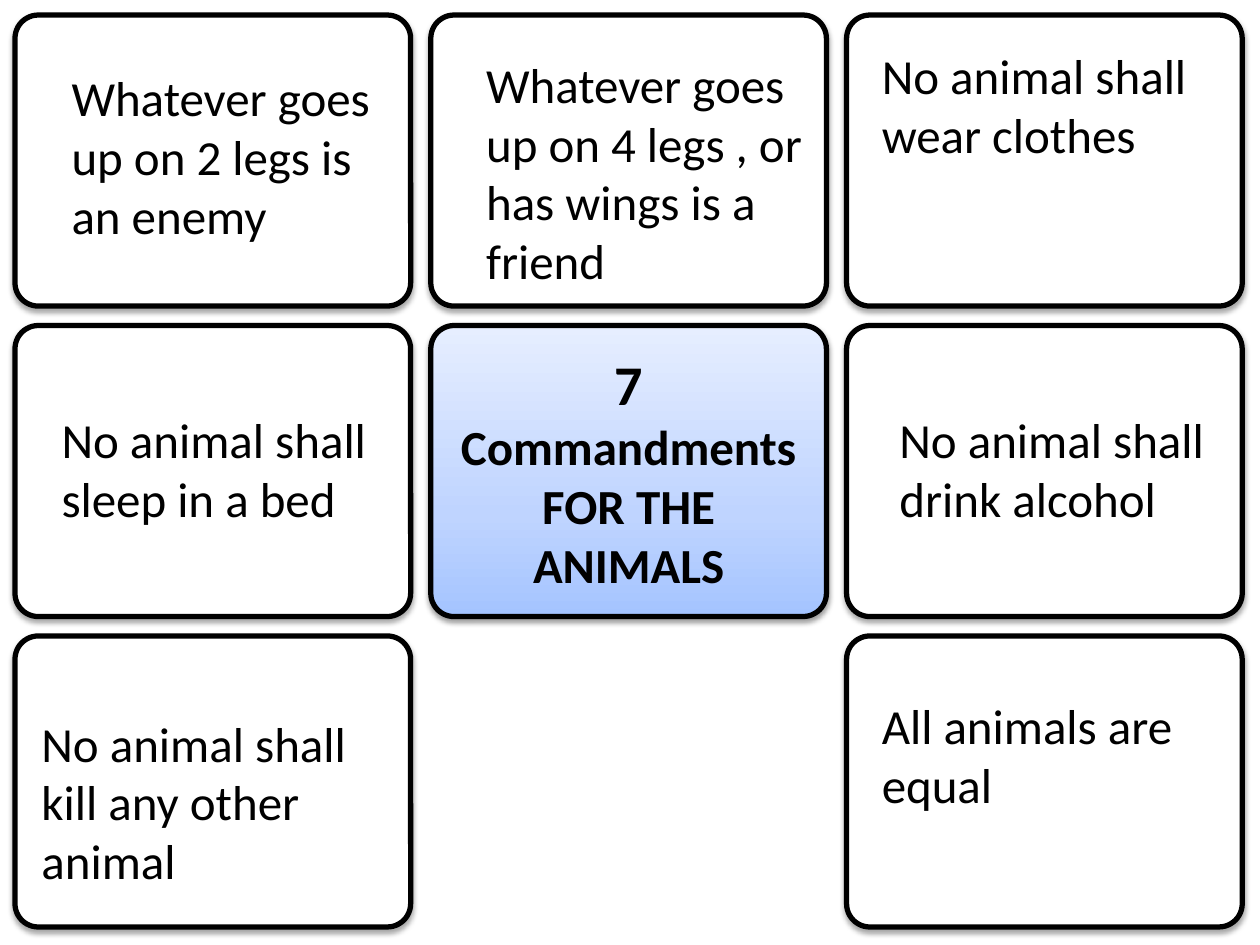
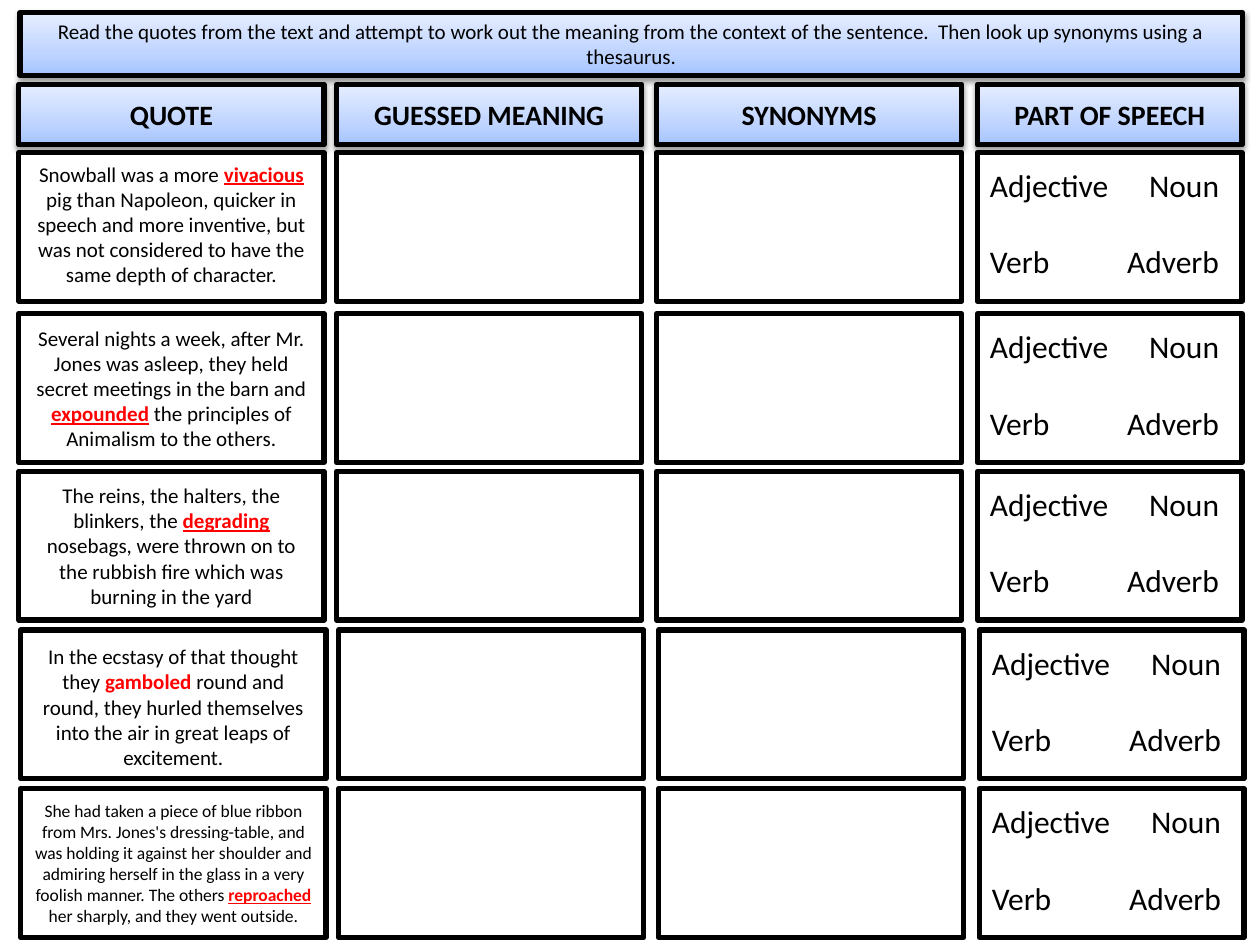
"""Builds a rules grid and a word-study sheet on two slides."""
from dataclasses import dataclass
from typing import Optional

import pptx
import pptx.dml.color
import pptx.enum.shapes
import pptx.enum.text
import pptx.oxml
import pptx.oxml.ns
import pptx.util
from lxml import etree

Pt = pptx.util.Pt
RGB = pptx.dml.color.RGBColor
KIND = pptx.enum.shapes.MSO_SHAPE
ALIGN = pptx.enum.text.PP_ALIGN
ANCHOR = pptx.enum.text.MSO_ANCHOR
FIT = pptx.enum.text.MSO_AUTO_SIZE
NS = pptx.oxml.ns.nsdecls("a")


@dataclass(frozen=True)
class Theme:
    """Colours, font and type sizes of both slides."""

    font: str = "Calibri"
    ink: str = "000000"
    paper: str = "FFFFFF"
    mark: str = "FF0000"
    blend: tuple = ((0, "A4C4FF"), (35, "BFD4FF"), (100, "E6EEFF"))
    edge: float = 3
    lead: float = 32
    rule: float = 28
    choice: float = 18
    head: float = 16
    body: float = 12
    small: float = 10


@dataclass(frozen=True)
class Box:
    """A place on the slide, in points."""

    left: float
    top: float
    width: float
    height: float

    def spots(self) -> list:
        """Returns the four lengths for python-pptx."""
        return [Pt(n) for n in (self.left, self.top, self.width, self.height)]


@dataclass(frozen=True)
class Rule:
    """One rule and the place of its words."""

    text: str
    box: Box


@dataclass(frozen=True)
class Quote:
    """A quote split around its key word, with its row's place."""

    start: str
    key: str
    rest: str
    top: float
    drop: float = 2.9
    shift: float = 0
    size: float = 12
    under: Optional[bool] = True


@dataclass(frozen=True)
class Column:
    """A column of the word sheet."""

    title: str
    left: float
    width: float


THEME = Theme()
RULES = (
    Rule("Whatever goes up on 2 legs is an enemy", Box(33.8, 35.3, 208.1, 108.7)),
    Rule("Whatever goes up on 4 legs , or has wings is a friend", Box(270.7, 27.4, 213.1, 143.3)),
    Rule("No animal shall wear clothes", Box(496.8, 22.3, 213.1, 74.9)),
    Rule("No animal shall sleep in a bed", Box(28.1, 230.4, 213.1, 74.9)),
    Rule("No animal shall drink alcohol", Box(506.9, 230.4, 213.1, 74.9)),
    Rule("No animal shall kill any other animal", Box(16.6, 403.9, 213.1, 108.7)),
    Rule("All animals are equal", Box(496.8, 393.8, 213.1, 74.9)),
)
COLUMNS = (
    Column("QUOTE", 10.8, 174.4),
    Column("GUESSED MEANING", 192.4, 174.4),
    Column("SYNONYMS", 375.2, 174.4),
    Column("PART OF SPEECH", 558.6, 151.2),
)
QUOTES = (
    Quote("Snowball was a more ", "vivacious",
          " pig than Napoleon, quicker in speech and more inventive, but was not "
          "considered to have the same depth of character.", 87.1, drop=1.4),
    Quote("Several nights a week, after Mr. Jones was asleep, they held secret "
          "meetings in the barn and ", "expounded",
          " the principles of Animalism to the others.", 179.3),
    Quote("The reins, the halters, the blinkers, the ", "degrading",
          " nosebags, were thrown on to the rubbish fire which was burning in the yard", 269.3),
    Quote("In the ecstasy of that thought they ", "gamboled",
          " round and round, they hurled themselves into the air in great leaps of "
          "excitement.", 360, drop=4.3, shift=1.1, under=None),
    Quote("She had taken a piece of blue ribbon from Mrs. Jones's dressing-table, and "
          "was holding it against her shoulder and admiring herself in the glass in a "
          "very foolish manner. The others ", "reproached",
          " her sharply, and they went outside.", 450.7, shift=1.1, size=THEME.small),
)
TASK = ("Read the quotes from the text and attempt to work out the meaning from the "
        "context of the sentence.  Then look up synonyms using a thesaurus.")


def shade(shape, drop: float, strength: int) -> None:
    """Adds a soft shadow below a shape."""
    shape._element.spPr.find(pptx.oxml.ns.qn("a:effectLst")).append(pptx.oxml.parse_xml(
        f'<a:outerShdw {NS} blurRad="{Pt(3.1)}" dist="{Pt(drop)}" dir="5400000" '
        f'rotWithShape="0"><a:srgbClr val="{THEME.ink}">'
        f'<a:alpha val="{strength * 1000}"/></a:srgbClr></a:outerShdw>'))


def blend(shape) -> None:
    """Fills a shape with the blue blend, lightest at the top."""
    shape.fill.gradient()
    fill = shape._element.spPr.find(pptx.oxml.ns.qn("a:gradFill"))
    stops = "".join(f'<a:gs pos="{at * 1000}"><a:srgbClr val="{tone}"/></a:gs>'
                    for at, tone in THEME.blend)
    fresh = pptx.oxml.parse_xml(
        f'<a:gradFill {NS} rotWithShape="1"><a:gsLst>{stops}</a:gsLst>'
        '<a:lin ang="16200000" scaled="0"/></a:gradFill>')
    fill.getparent().replace(fill, fresh)


def frame(slide, box: Box, blue: bool = False, card: bool = False):
    """Draws an outlined panel, plain or blue, square or rounded."""
    shape = slide.shapes.add_shape(KIND.ROUNDED_RECTANGLE if card else KIND.RECTANGLE, *box.spots())
    shape.shadow.inherit = False
    if card:
        shape.adjustments[0] = 0.08
    if blue:
        blend(shape)
        shade(shape, 1.6, 38)
    else:
        shape.fill.solid()
        shape.fill.fore_color.rgb = RGB.from_string(THEME.paper)
        if card:
            shade(shape, 1.8, 35)
    shape.line.color.rgb = RGB.from_string(THEME.ink)
    shape.line.width = Pt(THEME.edge)
    return shape


def style(para, size: Optional[float], bold: bool = False, align=ALIGN.CENTER) -> None:
    """Sets the font and alignment of a paragraph."""
    para.alignment = align
    para.font.name = THEME.font
    para.font.size = Pt(size) if size else None
    para.font.bold = bold
    para.font.color.rgb = RGB.from_string(THEME.ink)


def label(slide, box: Box):
    """Adds a wrapping text box and returns its text frame."""
    text = slide.shapes.add_textbox(*box.spots()).text_frame
    text.word_wrap = True
    text.auto_size = FIT.SHAPE_TO_FIT_TEXT
    return text


def panel(slide, box: Box, words: str, size: float, bold: bool, anchor) -> None:
    """Draws a blue panel with one centred paragraph."""
    text = frame(slide, box, blue=True).text_frame
    text.vertical_anchor = anchor
    text.text = words
    style(text.paragraphs[0], size, bold)


def cite(slide, quote: Quote, box: Box) -> None:
    """Writes a quote with its key word marked."""
    para = label(slide, box).paragraphs[0]
    style(para, quote.size)
    for words in (quote.start, quote.key, quote.rest):
        run = para.add_run()
        run.text = words
        if words == quote.key:
            run.font.bold = True
            run.font.underline = quote.under
            run.font.color.rgb = RGB.from_string(THEME.mark)


def options(slide, box: Box) -> None:
    """Writes the four parts of speech as two tabbed lines."""
    text = label(slide, box)
    text.text = "Adjective\tNoun\nVerb\tAdverb"
    for para in text.paragraphs:
        style(para, THEME.choice, align=ALIGN.LEFT)
        tabs = pptx.oxml.parse_xml(f'<a:tabLst {NS}><a:tab pos="{Pt(131)}" algn="r"/></a:tabLst>')
        para._p.pPr.find(pptx.oxml.ns.qn("a:defRPr")).addprevious(tabs)
    text.paragraphs[0].space_after = Pt(22)


def rules(slide) -> None:
    """Draws the grid of rules around its title."""
    for row in range(3):
        for col in range(3):
            box = Box(8.6 + 237.6 * col, 8.6 + 177.4 * row, 226.1, 166.3)
            if (row, col) == (1, 1):
                title(frame(slide, box, blue=True, card=True).text_frame)
            elif (row, col) != (2, 1):
                frame(slide, box, card=True)
    for rule in RULES:
        text = label(slide, rule.box)
        text.text = rule.text
        style(text.paragraphs[0], THEME.rule, align=ALIGN.LEFT)


def title(text) -> None:
    """Writes the title in the middle card."""
    text.vertical_anchor = ANCHOR.MIDDLE
    first = text.paragraphs[0]
    style(first, None, bold=True)
    for words, size in (("7 ", THEME.lead), ("Commandments", THEME.rule)):
        run = first.add_run()
        run.text = words
        run.font.size = Pt(size)
    last = text.add_paragraph()
    last.text = "FOR THE ANIMALS"
    style(last, THEME.rule, bold=True)


def words(slide) -> None:
    """Draws the word sheet: task, heads and quote rows."""
    for col in COLUMNS:
        panel(slide, Box(col.left, 48.2, col.width, 34.6), col.title, THEME.head, True, ANCHOR.MIDDLE)
    for quote in QUOTES:
        for col in COLUMNS:
            frame(slide, Box(col.left + quote.shift, quote.top, col.width, 85))
        first, last = COLUMNS[0], COLUMNS[-1]
        cite(slide, quote, Box(first.left + quote.shift, quote.top + quote.drop, first.width, 79.9))
        options(slide, Box(last.left + quote.shift, quote.top + 4.2, last.width, 72.7))
    panel(slide, Box(11.5, 7.2, 698.4, 36), TASK, THEME.body, False, ANCHOR.TOP)


def main() -> None:
    """Builds and saves the deck."""
    deck = pptx.Presentation()
    deck.slide_width, deck.slide_height = Pt(720), Pt(540)
    for draw in (rules, words):
        draw(deck.slides.add_slide(deck.slide_layouts[6]))
    deck.save("out.pptx")


if __name__ == "__main__":
    main()
